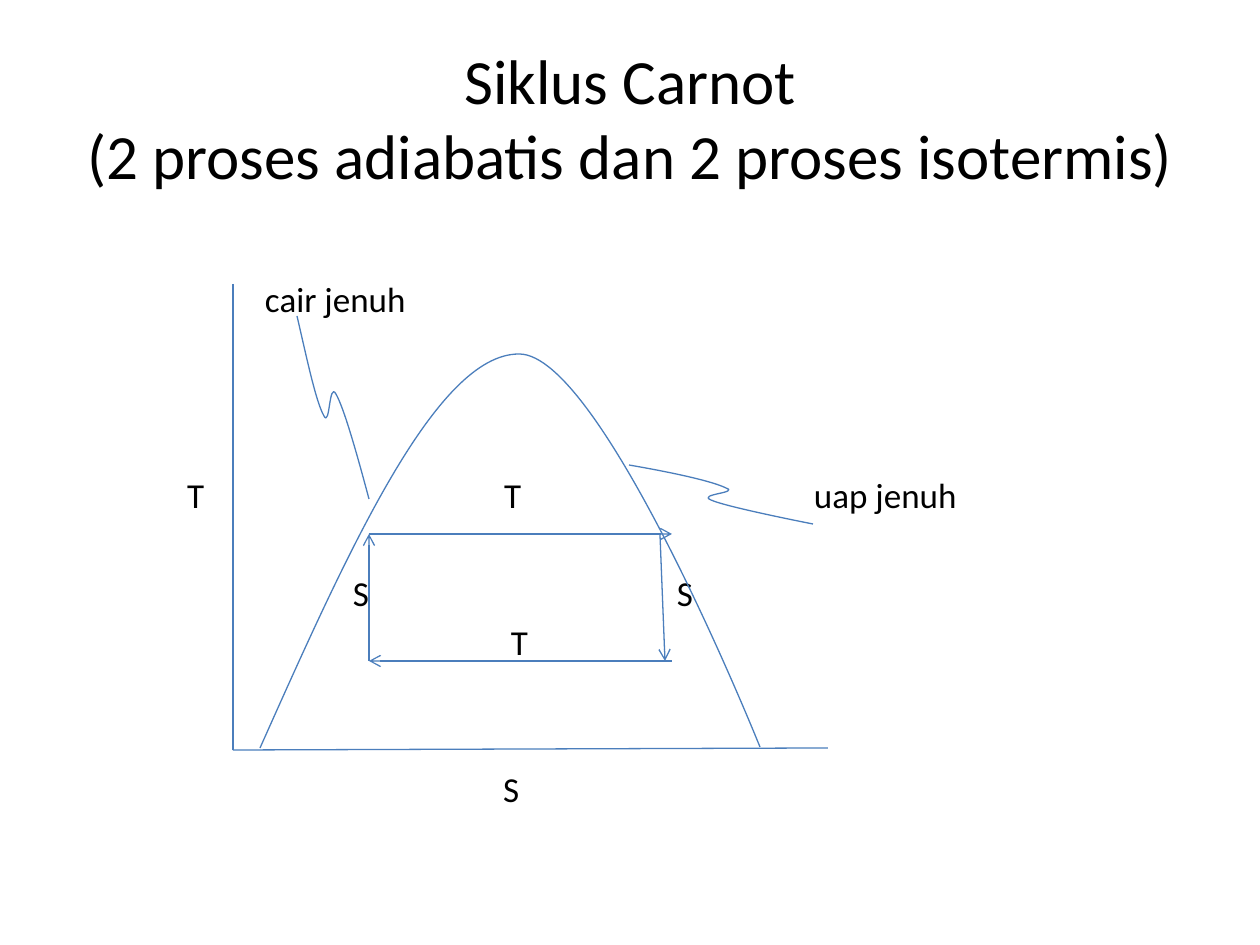
"""Build the Carnot cycle slide with its T-S diagram."""
from pptx import Presentation, util as u
from pptx.dml.color import RGBColor
from pptx.enum import text
from pptx.oxml import ns, xmlchemy

SCALE = 914400 / 126
THEME = {
    "font": "Calibri",
    "ink": RGBColor(0x00, 0x00, 0x00),
    "stroke": RGBColor(0x4B, 0x7E, 0xBC),
    "title": u.Pt(36),
    "label": u.Pt(20),
    "weight": u.Pt(0.75),
}
FRAME = {"margin_left": 0, "margin_right": 0, "margin_top": 0, "margin_bottom": 0,
         "word_wrap": True, "vertical_anchor": text.MSO_ANCHOR.MIDDLE,
         "auto_size": text.MSO_AUTO_SIZE.NONE}

TITLE = "Siklus Carnot\v(2 proses adiabatis dan 2 proses isotermis)"
TITLE_BOX = (63, 38, 1134, 158)
LABELS = [
    ("cair jenuh", 265, 0),
    ("T", 187, 4), ("T", 504, 4), ("uap jenuh", 814, 4),
    ("S", 353, 6), ("S", 677, 6),
    ("T", 511, 7),
    ("S", 503, 10),
]
FIRST_ROW, ROW_STEP, LABEL_WIDTH, LABEL_HEIGHT = 277, 49, 160, 43

AXES = [(233, 284, 233, 750), (233, 750, 828, 748)]
SATURATION_DOME = [(260, 748), (348, 551), (436, 354), (519, 354),
                   (602, 353), (760, 747), (760, 747)]
LIQUID_LEADER = [(297, 316), (307, 359), (316, 402), (324, 416), (330, 428),
                 (329, 381), (336, 394), (344, 408), (357, 454), (369, 499)]
VAPOUR_LEADER = [(629, 465), (670, 472), (712, 481), (726, 488), (740, 493),
                 (697, 494), (711, 500), (726, 507), (813, 524), (813, 524)]
PROCESSES = [(369, 534, 672, 534), (672, 661, 369, 661),
             (369, 661, 369, 534), (660, 534, 665, 661)]


def emu(*lengths):
    return [round(length * SCALE) for length in lengths]


def apply(target, values):
    for name, value in values.items():
        setattr(target, name, value)


def write(frame, words, size, align):
    apply(frame, FRAME)
    frame.text = words
    paragraph = frame.paragraphs[0]
    paragraph.alignment = align
    for run in paragraph.runs:
        apply(run.font, {"name": THEME["font"], "size": size})
        run.font.color.rgb = THEME["ink"]


def add_stroke(slide, ends, arrow=False):
    stroke = slide.shapes.add_connector(1, *emu(*ends))
    stroke.line.color.rgb = THEME["stroke"]
    stroke.line.width = THEME["weight"]
    properties = stroke._element.spPr
    if arrow:
        head = xmlchemy.OxmlElement("a:tailEnd")
        head.set("type", "arrow")
        properties.find(ns.qn("a:ln")).append(head)
    properties.append(xmlchemy.OxmlElement("a:effectLst"))


def add_curve(slide, points):
    builder = slide.shapes.build_freeform(*points[0], scale=SCALE)
    builder.add_line_segments(points[1:], close=False)
    curve = builder.convert_to_shape()
    curve.shadow.inherit = False
    curve.fill.background()
    curve.line.color.rgb = THEME["stroke"]
    curve.line.width = THEME["weight"]
    segments = list(curve._element.iter(ns.qn("a:lnTo")))
    for start in range(0, len(segments), 3):
        bezier = xmlchemy.OxmlElement("a:cubicBezTo")
        segments[start].addprevious(bezier)
        for segment in segments[start:start + 3]:
            bezier.append(segment[0])
            segment.getparent().remove(segment)


def main():
    deck = Presentation()
    deck.slide_width, deck.slide_height = u.Inches(10), u.Inches(7.5)
    slide = deck.slides.add_slide(deck.slide_layouts[5])

    title = slide.shapes.title
    apply(title, dict(zip(("left", "top", "width", "height"), emu(*TITLE_BOX))))
    write(title.text_frame, TITLE, THEME["title"], text.PP_ALIGN.CENTER)

    for words, left, row in LABELS:
        top = FIRST_ROW + row * ROW_STEP
        label = slide.shapes.add_textbox(*emu(left, top, LABEL_WIDTH, LABEL_HEIGHT))
        write(label.text_frame, words, THEME["label"], text.PP_ALIGN.LEFT)

    for axis in AXES:
        add_stroke(slide, axis)
    for points in (SATURATION_DOME, LIQUID_LEADER, VAPOUR_LEADER):
        add_curve(slide, points)
    for process in PROCESSES:
        add_stroke(slide, process, arrow=True)

    deck.save("out.pptx")


if __name__ == "__main__":
    main()
